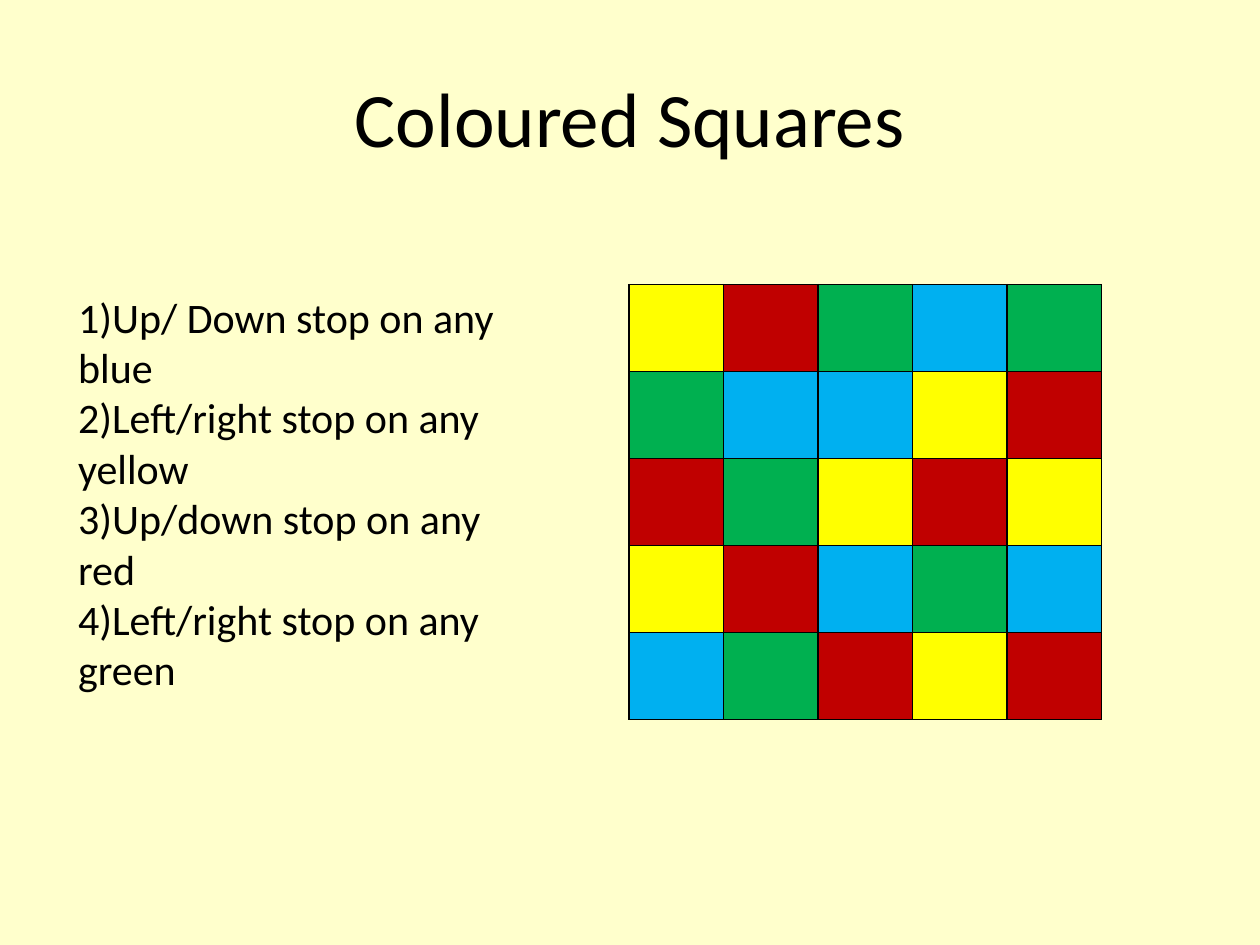
"""Build the Coloured Squares slide: four moves beside a grid of colours."""
from lxml import etree
from pptx import Presentation
from pptx.dml.color import RGBColor
from pptx.enum.text import MSO_ANCHOR, MSO_AUTO_SIZE, PP_ALIGN
from pptx.oxml.ns import qn
from pptx.util import Inches, Pt

LEFT, CENTER = PP_ALIGN.LEFT, PP_ALIGN.CENTER
TOP, MIDDLE = MSO_ANCHOR.TOP, MSO_ANCHOR.MIDDLE
FIT, FIXED = MSO_AUTO_SIZE.SHAPE_TO_FIT_TEXT, MSO_AUTO_SIZE.NONE

CREAM = RGBColor(0xFF, 0xFF, 0xCC)
BLACK = RGBColor(0x00, 0x00, 0x00)
YELLOW = RGBColor(0xFF, 0xFF, 0x00)
RED = RGBColor(0xC0, 0x00, 0x00)
GREEN = RGBColor(0x00, 0xB0, 0x50)
BLUE = RGBColor(0x00, 0xB0, 0xF0)

TITLE = "Coloured Squares"
MOVES = [
    "1)Up/ Down stop on any blue",
    "2)Left/right stop on any yellow",
    "3)Up/down stop on any red",
    "4)Left/right stop on any green",
]
HUES = {"Y": YELLOW, "R": RED, "G": GREEN, "B": BLUE}
GRID = ["YRGBG", "GBBYR", "RGYRY", "YRBGB", "BGRYR"]
CELL_W, CELL_H = 0.75, 0.69


def place(shape, left, top, width, height):
    shape.left, shape.top = Inches(left), Inches(top)
    shape.width, shape.height = Inches(width), Inches(height)


def write(shape, lines, size=24, align=LEFT, anchor=TOP, fit=FIXED):
    frame = shape.text_frame
    frame.text = "\n".join(lines)
    frame.word_wrap = True
    frame.auto_size = fit
    frame.vertical_anchor = anchor
    for para in frame.paragraphs:
        para.alignment = align
        para.space_before = Pt(0)
        props = para._p.get_or_add_pPr()
        props.set("marL", "0")
        props.set("indent", "0")
        etree.SubElement(props, qn("a:buNone"))
        font = para.runs[0].font
        font.name, font.size = "Calibri", Pt(size)
        font.color.rgb = BLACK


def border(cell):
    props = cell._tc.get_or_add_tcPr()
    for side in "LRTB":
        line = etree.SubElement(props, qn(f"a:ln{side}"), w=str(Pt(1)))
        fill = etree.SubElement(line, qn("a:solidFill"))
        etree.SubElement(fill, qn("a:srgbClr"), val=str(BLACK))


def draw_grid(slide, left, top):
    rows, cols = len(GRID), len(GRID[0])
    table = slide.shapes.add_table(
        rows, cols, Inches(left), Inches(top),
        Inches(cols * CELL_W), Inches(rows * CELL_H)).table
    for r, row in enumerate(GRID):
        for c, hue in enumerate(row):
            cell = table.cell(r, c)
            border(cell)
            cell.fill.solid()
            cell.fill.fore_color.rgb = HUES[hue]


def main():
    deck = Presentation()
    deck.slide_width, deck.slide_height = Inches(10), Inches(7.5)
    slide = deck.slides.add_slide(deck.slide_layouts[1])
    back = slide.background.fill
    back.solid()
    back.fore_color.rgb = CREAM

    title, body = slide.placeholders
    place(title, 0.5, 0.3, 9, 1.25)
    write(title, [TITLE], size=44, align=CENTER, anchor=MIDDLE)
    place(body, 0.52, 2.26, 3.6, 3.33)
    write(body, MOVES, fit=FIT)
    draw_grid(slide, 4.99, 2.26)
    deck.save("out.pptx")


if __name__ == "__main__":
    main()
